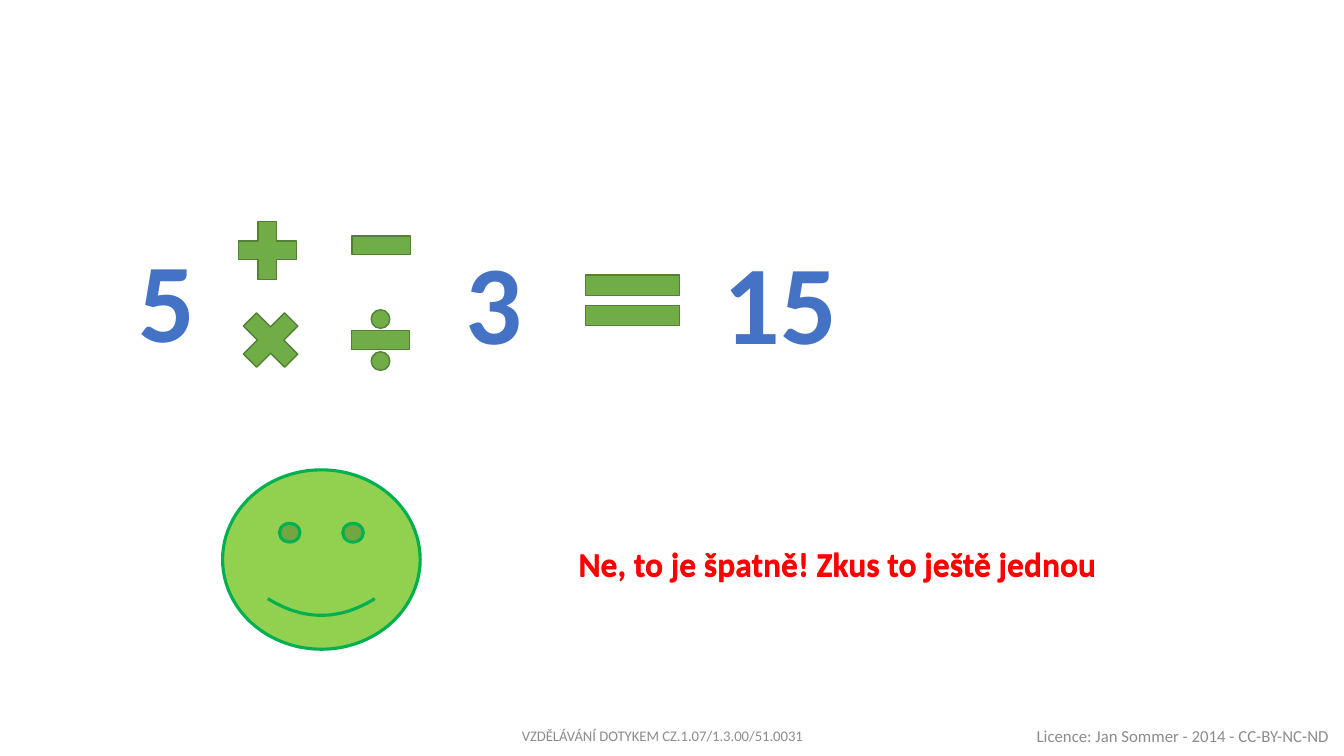
from pptx import Presentation
from pptx import util as u
from pptx.dml.color import RGBColor
from pptx.enum import shapes, text

# Content: lengths in cm as left, top, width, height
BLUE, RED, GREY = "4472C4", "FF0000", "8C8C8C"
GREEN, DARK_GREEN = "70AD47", "538035"
LIME, EMERALD = "92D050", "00B050"
SIGN = 2.0

numbers = [
    ("5", (3.23, 5.69, 1.73, 3.68)),
    ("3", (11.48, 5.74, 1.73, 3.68)),
    ("15", (17.98, 5.74, 3.81, 3.68)),
]
signs = [
    (shapes.MSO_SHAPE.MATH_PLUS, (5.74, 5.31, SIGN, SIGN)),
    (shapes.MSO_SHAPE.MATH_MINUS, (8.61, 5.18, SIGN, SIGN)),
    (shapes.MSO_SHAPE.MATH_MULTIPLY, (5.82, 7.57, SIGN, SIGN)),
    (shapes.MSO_SHAPE.MATH_DIVIDE, (8.59, 7.57, SIGN, SIGN)),
    (shapes.MSO_SHAPE.MATH_EQUAL, (14.33, 6.48, 3.23, 2.18)),
]
smiley = (5.61, 11.84, 4.98, 4.52)
feedback = "Ne, to je špatně! Zkus to ještě jednou"
feedback_tops = (13.56, 13.59)
footers = [
    ("Licence: Jan Sommer - 2014 - CC-BY-NC-ND", (25.76, 18.03, 8.1, 1.02),
     12, text.PP_ALIGN.CENTER),
    ("VZDĚLÁVÁNÍ DOTYKEM CZ.1.07/1.3.00/51.0031", (12.9, 18.03, 8.05, 1.02),
     10.5, text.PP_ALIGN.LEFT),
]


def color(value):
    return RGBColor.from_string(value)


def add_symbol(slide, kind, box, fill, line, weight):
    shape = slide.shapes.add_shape(kind, *map(u.Cm, box))
    shape.shadow.inherit = False
    shape.fill.solid()
    shape.fill.fore_color.rgb = color(fill)
    shape.line.color.rgb = color(line)
    shape.line.width = u.Pt(weight)


def add_text(slide, words, box, size, ink, bold=False,
             align=text.PP_ALIGN.LEFT, anchor=text.MSO_ANCHOR.TOP):
    frame = slide.shapes.add_textbox(*map(u.Cm, box)).text_frame
    frame.word_wrap = True
    frame.vertical_anchor = anchor
    frame.text = words
    paragraph = frame.paragraphs[0]
    paragraph.alignment = align
    font = paragraph.runs[0].font
    font.name, font.size, font.bold = "Calibri", u.Pt(size), bold
    font.color.rgb = color(ink)


def main():
    presentation = Presentation()
    presentation.slide_width = u.Cm(33.87)
    presentation.slide_height = u.Cm(19.05)
    slide = presentation.slides.add_slide(presentation.slide_layouts[6])

    # Equation with the choice of operators
    for words, box in numbers:
        add_text(slide, words, box, 80, BLUE, bold=True)
    for kind, box in signs:
        add_symbol(slide, kind, box, GREEN, DARK_GREEN, 1)

    # Feedback, doubled with a slight offset for a heavier look
    add_symbol(slide, shapes.MSO_SHAPE.SMILEY_FACE, smiley, LIME, EMERALD, 2.25)
    for top in feedback_tops:
        add_text(slide, feedback, (14.33, top, 14.78, 1.27), 24, RED, bold=True)

    # Footers
    for words, box, size, align in footers:
        add_text(slide, words, box, size, GREY, align=align,
                 anchor=text.MSO_ANCHOR.MIDDLE)

    presentation.save("out.pptx")


if __name__ == "__main__":
    main()
